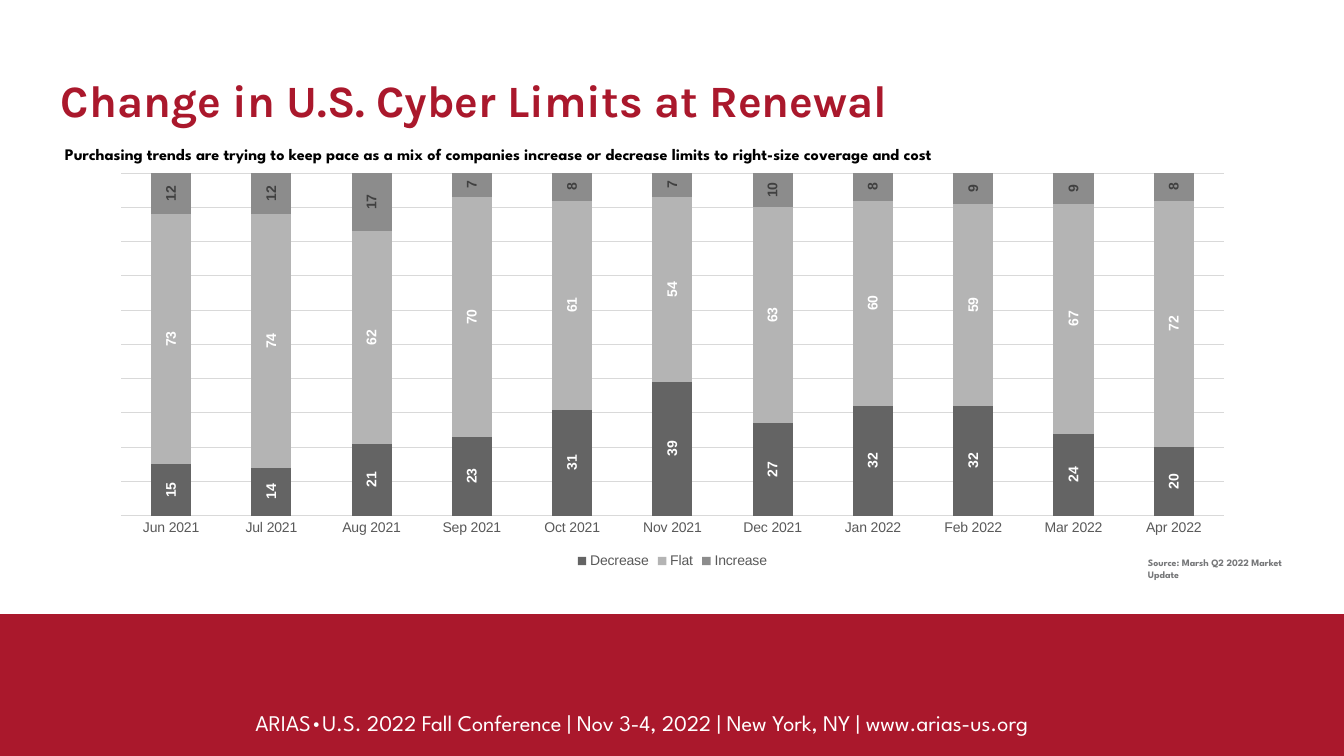
import lxml.etree
import pptx
import pptx.chart.data
import pptx.dml.color
import pptx.enum.chart
import pptx.enum.shapes
import pptx.enum.text
import pptx.oxml
import pptx.oxml.ns
import pptx.util

RGB = pptx.dml.color.RGBColor
CRIMSON = RGB(0xAA, 0x18, 0x2C)
WHITE = RGB(0xFF, 0xFF, 0xFF)
BLACK = RGB(0, 0, 0)
SOURCE_GREY = RGB(0x76, 0x77, 0x79)
AXIS_GREY = RGB(0x59, 0x59, 0x59)
GRID_GREY = RGB(0xD9, 0xD9, 0xD9)
DARK_GREY = RGB(0x64, 0x64, 0x64)
LIGHT_GREY = RGB(0xB4, 0xB4, 0xB4)
MID_GREY = RGB(0x8C, 0x8C, 0x8C)
LABEL_GREY = RGB(0x40, 0x40, 0x40)

PX_PER_INCH = 100.8
INSET = 5
INDENT = 25
NUMBER_FORMAT = '_(* #,##0_);_(* \\(#,##0\\);_(* "-"??_);_('
MONTHS = ["Jun 2021", "Jul 2021", "Aug 2021", "Sep 2021", "Oct 2021", "Nov 2021",
          "Dec 2021", "Jan 2022", "Feb 2022", "Mar 2022", "Apr 2022"]
CHANGES = [
    ("Decrease", [15, 14, 21, 23, 31, 39, 27, 32, 32, 24, 20], DARK_GREY, WHITE),
    ("Flat", [73, 74, 62, 70, 61, 54, 63, 60, 59, 67, 72], LIGHT_GREY, WHITE),
    ("Increase", [12, 12, 17, 7, 8, 7, 10, 8, 9, 9, 8], MID_GREY, LABEL_GREY),
]


def px(length):
    """Turn whole pixels into EMU."""
    return pptx.util.Emu(round(length * 914400 / PX_PER_INCH))


def set_font(font, name, size, color, bold=False):
    """Give a font its face, size, colour and weight."""
    font.name = name
    font.size = pptx.util.Pt(size)
    font.bold = bold
    font.color.rgb = color


def write(frame, words, name, size, color, bold=False, indent=0,
          align=pptx.enum.text.PP_ALIGN.LEFT, anchor=pptx.enum.text.MSO_ANCHOR.TOP):
    """Fill a text frame with one formatted paragraph."""
    frame.word_wrap = True
    frame.auto_size = pptx.enum.text.MSO_AUTO_SIZE.NONE
    frame.vertical_anchor = anchor
    frame.margin_left = frame.margin_right = px(INSET)
    frame.margin_top = frame.margin_bottom = px(INSET)
    paragraph = frame.paragraphs[0]
    paragraph.alignment = align
    if indent:
        properties = paragraph._p.get_or_add_pPr()
        properties.set("marL", str(px(indent)))
        properties.set("indent", "0")
    run = paragraph.add_run()
    run.text = words
    set_font(run.font, name, size, color, bold)


def add_footer(slide, left, top, width, height):
    """Draw the crimson band with the conference line."""
    band = slide.shapes.add_shape(pptx.enum.shapes.MSO_SHAPE.RECTANGLE,
                                  px(left), px(top), px(width), px(height))
    band.shadow.inherit = False
    band.fill.solid()
    band.fill.fore_color.rgb = CRIMSON
    band.line.fill.background()
    conference = slide.shapes.add_textbox(px(left + 64), px(top + 90), px(1162), px(38))
    write(conference.text_frame,
          "ARIAS•U.S. 2022 Fall Conference | Nov 3-4, 2022 | New York, NY\u00a0| www.arias-us.org",
          "League Spartan", 16, WHITE, align=pptx.enum.text.PP_ALIGN.CENTER,
          anchor=pptx.enum.text.MSO_ANCHOR.MIDDLE)


def add_heading(slide, left, top, width, height):
    """Place the title and the subtitle below it."""
    title = slide.shapes.title
    title.left, title.top, title.width, title.height = map(px, (left, top, width, height))
    write(title.text_frame, "Change in U.S. Cyber Limits at Renewal", "Karla", 32, CRIMSON, True)
    subtitle = slide.shapes.add_textbox(px(left - 21), px(top + 71), px(1163), px(44))
    write(subtitle.text_frame,
          "Purchasing trends are trying to keep pace as a mix of companies increase "
          "or decrease limits to right-size coverage and cost",
          "League Spartan", 11.5, BLACK, True, INDENT)


def add_source(slide, left, top, width, height):
    """Place the source line."""
    source = slide.shapes.add_textbox(px(left), px(top), px(width), px(height))
    write(source.text_frame, "Source: Marsh Q2 2022 Market Update",
          "League Spartan", 7, SOURCE_GREY, True, INDENT)


def style_axes(chart):
    """Format the month axis, the hidden value axis and its gridlines."""
    months = chart.category_axis
    months.major_tick_mark = pptx.enum.chart.XL_TICK_MARK.NONE
    months.format.line.color.rgb = GRID_GREY
    months.format.line.width = pptx.util.Pt(0.75)
    set_font(months.tick_labels.font, "Arial", 10, AXIS_GREY)
    share = chart.value_axis
    share.visible = False
    share.minimum_scale, share.maximum_scale, share.major_unit = 0, 100, 10
    share.has_major_gridlines = True
    share.major_gridlines.format.line.color.rgb = GRID_GREY
    share.major_gridlines.format.line.width = pptx.util.Pt(0.75)


def style_series(series, fill, label_color):
    """Colour one series and turn its value labels upright."""
    series.format.fill.solid()
    series.format.fill.fore_color.rgb = fill
    series.invert_if_negative = False
    labels = series.data_labels
    labels.show_value = True
    labels.number_format = NUMBER_FORMAT
    labels.number_format_is_linked = False
    labels.position = pptx.enum.chart.XL_LABEL_POSITION.CENTER
    set_font(labels.font, "Arial", 10, label_color, True)
    body = labels._element.find(".//" + pptx.oxml.ns.qn("a:bodyPr"))
    body.set("rot", "-5400000")
    body.set("vert", "horz")


def set_plot_layout(chart, **fractions):
    """Fix the inner plot area as fractions of the chart."""
    plot_area = chart._chartSpace.chart.plotArea
    for automatic in plot_area.findall(pptx.oxml.ns.qn("c:layout")):
        plot_area.remove(automatic)
    layout = pptx.oxml.parse_xml(
        f'<c:layout {pptx.oxml.ns.nsdecls("c")}><c:manualLayout>'
        '<c:layoutTarget val="inner"/><c:xMode val="edge"/><c:yMode val="edge"/>'
        '</c:manualLayout></c:layout>')
    for side, fraction in fractions.items():
        lxml.etree.SubElement(layout[0], pptx.oxml.ns.qn(f"c:{side}")).set("val", str(fraction))
    plot_area.insert(0, layout)


def add_limits_chart(slide, left, top, width, height):
    """Draw the stacked columns of limit changes by month."""
    data = pptx.chart.data.CategoryChartData(number_format=NUMBER_FORMAT)
    data.categories = MONTHS
    for name, values, _, _ in CHANGES:
        data.add_series(name, values)
    chart = slide.shapes.add_chart(pptx.enum.chart.XL_CHART_TYPE.COLUMN_STACKED,
                                   px(left), px(top), px(width), px(height), data).chart
    chart.has_title = False
    set_font(chart.font, "Arial", 10, BLACK)
    style_axes(chart)
    plot = chart.plots[0]
    plot.vary_by_categories = False
    plot.gap_width, plot.overlap = 150, 100
    for series, (_, _, fill, label_color) in zip(plot.series, CHANGES):
        style_series(series, fill, label_color)
    chart.has_legend = True
    chart.legend.position = pptx.enum.chart.XL_LEGEND_POSITION.BOTTOM
    chart.legend.include_in_layout = False
    set_font(chart.legend.font, "Arial", 10, AXIS_GREY)
    set_plot_layout(chart, x=0.02, y=0.02, w=0.96, h=0.84)


def main():
    """Build the slide and save it."""
    deck = pptx.Presentation()
    deck.slide_width, deck.slide_height = px(1344), px(756)
    slide = deck.slides.add_slide(deck.slide_layouts[5])
    slide.background.fill.solid()
    slide.background.fill.fore_color.rgb = WHITE
    add_footer(slide, -3, 614, 1351, 158)
    add_heading(slide, 56, 68, 1230, 103)
    add_source(slide, 1118, 552, 186, 37)
    add_limits_chart(slide, 98, 165, 1149, 408)
    deck.save("out.pptx")


if __name__ == "__main__":
    main()
